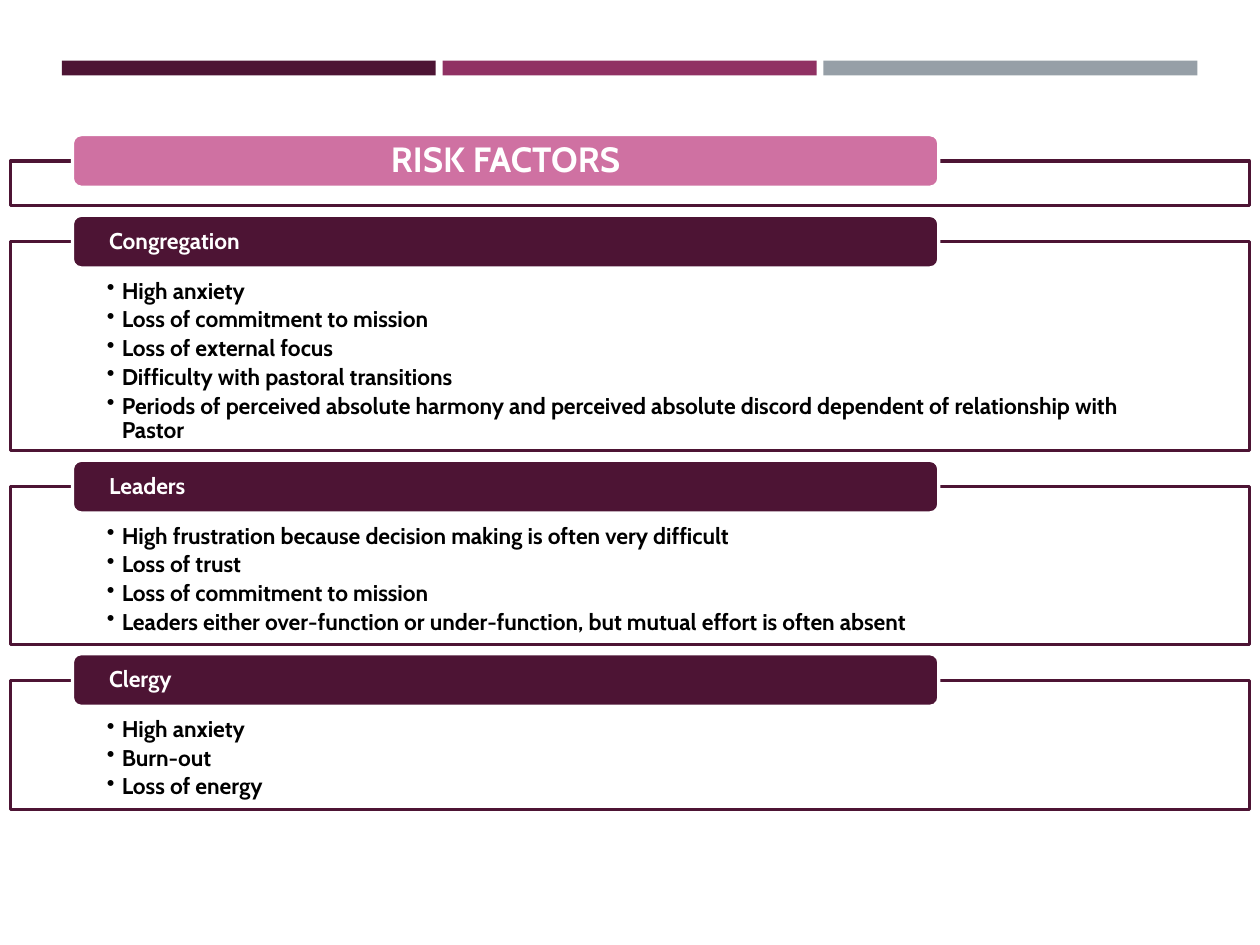
from lxml import etree
from pptx import Presentation
from pptx.dml.color import RGBColor
from pptx.enum.shapes import MSO_SHAPE
from pptx.enum.text import MSO_ANCHOR, MSO_AUTO_SIZE, PP_ALIGN
from pptx.oxml.ns import qn
from pptx.util import Pt

RECT, ROUNDED = MSO_SHAPE.RECTANGLE, MSO_SHAPE.ROUNDED_RECTANGLE
TOP, MIDDLE = MSO_ANCHOR.TOP, MSO_ANCHOR.MIDDLE
LEFT, CENTER = PP_ALIGN.LEFT, PP_ALIGN.CENTER
NO_AUTOFIT = MSO_AUTO_SIZE.NONE

PLUM = RGBColor(0x4D, 0x14, 0x34)
MAGENTA = RGBColor(0x90, 0x31, 0x63)
GRAY = RGBColor(0x96, 0x9F, 0xA7)
PINK = RGBColor(0xCF, 0x71, 0xA2)
WHITE = RGBColor(0xFF, 0xFF, 0xFF)
BLACK = RGBColor(0, 0, 0)
FONT = "Cabin"

HEADLINE = "RISK FACTORS"
HEADLINE_FRAME_HEIGHT = 25.6
GROUPS = [
    ("Congregation", 119.5, [
        "High anxiety",
        "Loss of commitment to mission",
        "Loss of external focus",
        "Difficulty with pastoral transitions",
        "Periods of perceived absolute harmony and perceived absolute discord "
        "dependent of relationship with Pastor",
    ]),
    ("Leaders", 90, [
        "High frustration because decision making is often very difficult",
        "Loss of trust",
        "Loss of commitment to mission",
        "Leaders either over-function or under-function, "
        "but mutual effort is often absent",
    ]),
    ("Clergy", 74, ["High anxiety", "Burn-out", "Loss of energy"]),
]

STRIPES = [PLUM, MAGENTA, GRAY]
STRIPE_LEFT, STRIPE_TOP, STRIPE_PITCH = 35.3, 34.7, 217.6
STRIPE_WIDTH, STRIPE_HEIGHT = 213.7, 8.4

FRAME_LEFT, FRAME_WIDTH, FRAME_TOP, FRAME_GAP = 6, 708, 92, 20.5
BAR_LEFT, BAR_WIDTH, BAR_HEIGHT, BAR_RISE = 41.4, 495, 30, 15
BULLET_INDENT = 8.6


def add_box(kind, left, top, width, height, fill, outline=None):
    box = slide.shapes.add_shape(kind, Pt(left), Pt(top), Pt(width), Pt(height))
    box.shadow.inherit = False
    box.fill.solid()
    box.fill.fore_color.rgb = fill
    if outline is None:
        box.line.fill.background()
    else:
        box.line.color.rgb = outline
        box.line.width = Pt(1.75)
    return box


def write(holder, lines, size, color, anchor, align, margins, space_after=0):
    frame = holder.text_frame
    frame.word_wrap = True
    frame.auto_size = NO_AUTOFIT
    frame.vertical_anchor = anchor
    (frame.margin_left, frame.margin_top,
     frame.margin_right, frame.margin_bottom) = map(Pt, margins)
    for index, line in enumerate(lines):
        paragraph = frame.add_paragraph() if index else frame.paragraphs[0]
        paragraph.alignment = align
        paragraph.line_spacing = 0.9
        paragraph.space_before = Pt(0)
        paragraph.space_after = Pt(space_after)
        run = paragraph.add_run()
        run.text = line
        run.font.name = FONT
        run.font.size = Pt(size)
        run.font.bold = True
        run.font.color.rgb = color
    return frame.paragraphs


def add_bullet(paragraph):
    paragraph.level = 1
    properties = paragraph._p.get_or_add_pPr()
    properties.set("marL", str(Pt(BULLET_INDENT)))
    properties.set("indent", str(-Pt(BULLET_INDENT)))
    etree.SubElement(properties, qn("a:buChar")).set("char", "•")


def add_frame(top, height):
    frame = add_box(RECT, FRAME_LEFT, top, FRAME_WIDTH, height, WHITE, PLUM)
    color = frame.fill._xPr.find(qn("a:solidFill"))[0]
    etree.SubElement(color, qn("a:alpha")).set("val", "90000")
    return frame


def add_bar(frame_top, fill):
    return add_box(ROUNDED, BAR_LEFT, frame_top - BAR_RISE,
                   BAR_WIDTH, BAR_HEIGHT, fill, WHITE)


prs = Presentation()
prs.slide_width, prs.slide_height = Pt(720), Pt(540)
slide = prs.slides.add_slide(prs.slide_layouts[5])

for column, stripe_color in enumerate(STRIPES):
    add_box(RECT, STRIPE_LEFT + column * STRIPE_PITCH, STRIPE_TOP,
            STRIPE_WIDTH, STRIPE_HEIGHT, stripe_color)

add_frame(FRAME_TOP, HEADLINE_FRAME_HEIGHT)
headline_bar = add_bar(FRAME_TOP, PINK)
title = slide.shapes.title
title.left, title.top = headline_bar.left, headline_bar.top
title.width, title.height = headline_bar.width, headline_bar.height
headline_bar.element.addnext(title.element)
write(title, [HEADLINE], 20, WHITE, MIDDLE, CENTER, (20, 0, 20, 0))

top = FRAME_TOP + HEADLINE_FRAME_HEIGHT + FRAME_GAP
for heading, height, factors in GROUPS:
    frame = add_frame(top, height)
    for paragraph in write(frame, factors, 13, BLACK, TOP, LEFT,
                           (55, 21.6, 55, 7.2), 2.34):
        add_bullet(paragraph)
    write(add_bar(top, PLUM), [heading], 13, WHITE, MIDDLE, LEFT,
          (19.5, 0, 19.5, 0))
    top += height + FRAME_GAP

prs.save("out.pptx")
